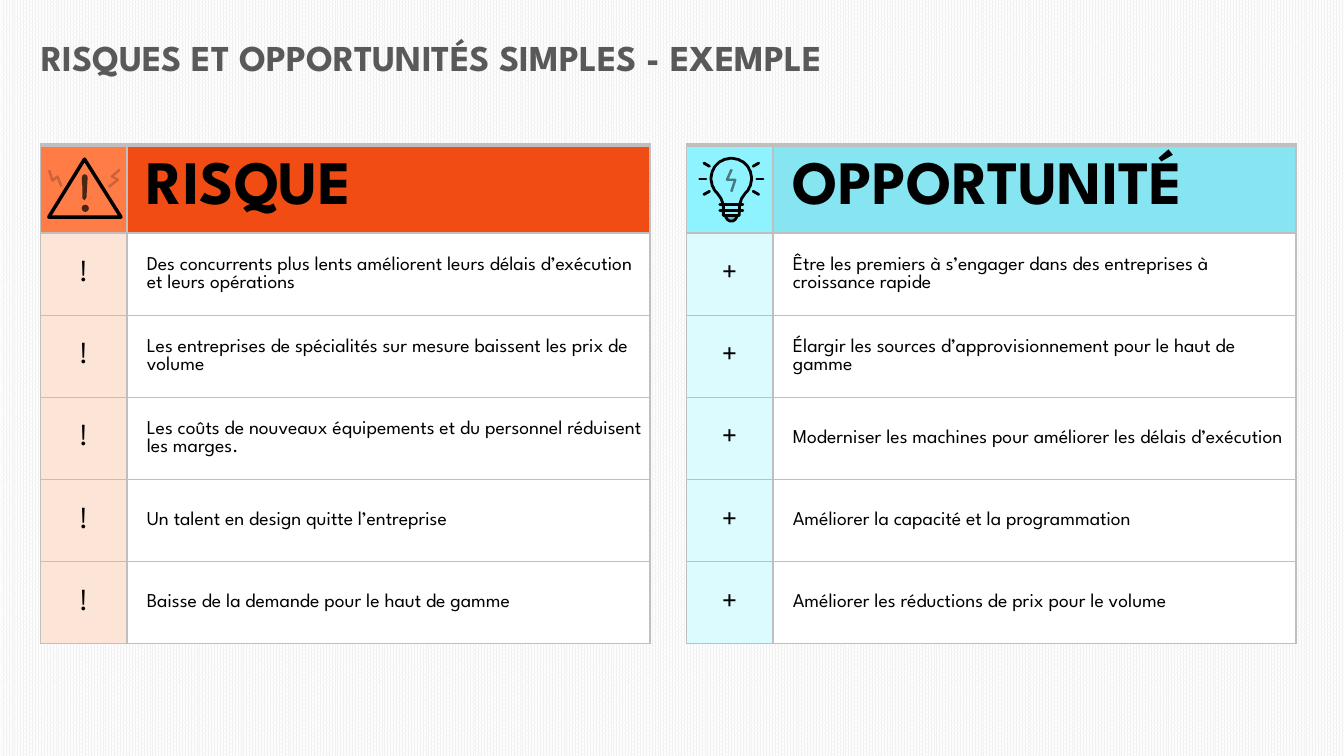
import math

from lxml import etree
from pptx import Presentation
from pptx.dml.color import RGBColor
from pptx.enum.dml import MSO_PATTERN
from pptx.enum.shapes import MSO_CONNECTOR, MSO_SHAPE
from pptx.enum.text import MSO_ANCHOR, PP_ALIGN
from pptx.oxml.ns import qn
from pptx.util import Cm, Pt

FONT = "League Spartan"
BLACK = RGBColor(0x00, 0x00, 0x00)
WHITE = RGBColor(0xFF, 0xFF, 0xFF)
PALE_GREY = RGBColor(0xF2, 0xF2, 0xF2)
BORDER_GREY = RGBColor(0xBF, 0xBF, 0xBF)
TITLE_GREY = RGBColor(0x59, 0x59, 0x59)
ORANGE = RGBColor(0xF0, 0x4C, 0x13)
LIGHT_ORANGE = RGBColor(0xFF, 0x7C, 0x46)
PALE_ORANGE = RGBColor(0xFC, 0xE4, 0xD6)
CYAN = RGBColor(0x86, 0xE5, 0xF1)
LIGHT_CYAN = RGBColor(0x8E, 0xF3, 0xFF)
PALE_CYAN = RGBColor(0xDC, 0xFB, 0xFF)
PERCENT_80 = MSO_PATTERN.PERCENT_80
STRAIGHT = MSO_CONNECTOR.STRAIGHT
OVAL = MSO_SHAPE.OVAL
MIDDLE = MSO_ANCHOR.MIDDLE
LEFT, CENTER = PP_ALIGN.LEFT, PP_ALIGN.CENTER
UNIT = Cm(0.01)

TABLES = [
    (1.02, "RISQUE", "!", ORANGE, LIGHT_ORANGE, PALE_ORANGE, [
        "Des concurrents plus lents améliorent leurs délais d’exécution et leurs opérations",
        "Les entreprises de spécialités sur mesure baissent les prix de volume",
        "Les coûts de nouveaux équipements et du personnel réduisent les marges.",
        "Un talent en design quitte l’entreprise",
        "Baisse de la demande pour le haut de gamme",
    ]),
    (17.3, "OPPORTUNITÉ", "+", CYAN, LIGHT_CYAN, PALE_CYAN, [
        "Être les premiers à s’engager dans des entreprises à croissance rapide",
        "Élargir les sources d’approvisionnement pour le haut de gamme",
        "Moderniser les machines pour améliorer les délais d’exécution",
        "Améliorer la capacité et la programmation",
        "Améliorer les réductions de prix pour le volume",
    ]),
]


def paint(shape, line_width, fill_opacity=0, line_opacity=100):
    shape.shadow.inherit = False
    if fill_opacity:
        shape.fill.solid()
        shape.fill.fore_color.rgb = BLACK
    else:
        shape.fill.background()
    if line_width:
        shape.line.width = Pt(line_width)
        shape.line.color.rgb = BLACK
        etree.SubElement(shape.line._get_or_add_ln(), qn("a:round"))
    else:
        shape.line.fill.background()
    opacities = (fill_opacity, line_opacity) if fill_opacity else (line_opacity,)
    for color, opacity in zip(shape._element.spPr.iter(qn("a:srgbClr")), opacities):
        etree.SubElement(color, qn("a:alpha"), val=str(opacity * 1000))


def draw(points, close, line_width, fill_opacity=0, line_opacity=100):
    builder = slide.shapes.build_freeform(*points[0], scale=UNIT)
    builder.add_line_segments(points[1:], close=close)
    paint(builder.convert_to_shape(), line_width, fill_opacity, line_opacity)


presentation = Presentation()
presentation.slide_width = Cm(33.87)
presentation.slide_height = Cm(19.05)
slide = presentation.slides.add_slide(presentation.slide_layouts[6])

background = slide.background.fill
background.patterned()
background.pattern = PERCENT_80
background.fore_color.rgb = PALE_GREY
background.back_color.rgb = WHITE

title = slide.shapes.add_textbox(Cm(0.79), Cm(0.76), Cm(31.88), Cm(1.37))
title.text_frame.word_wrap = True
paragraph = title.text_frame.paragraphs[0]
paragraph.text = "RISQUES ET OPPORTUNITÉS SIMPLES - EXEMPLE"
paragraph.font.name = FONT
paragraph.font.size = Pt(26)
paragraph.font.bold = True
paragraph.font.color.rgb = TITLE_GREY

for left, heading, mark, heading_color, icon_color, mark_color, entries in TABLES:
    table = slide.shapes.add_table(
        6, 2, Cm(left), Cm(3.66), Cm(15.36), Cm(12.56)).table
    table.first_row = False
    table.horz_banding = False
    table.columns[0].width = Cm(2.18)
    table.columns[1].width = Cm(13.18)
    rows = [("", icon_color, heading, heading_color)]
    rows += [(mark, mark_color, entry, WHITE) for entry in entries]
    for row, (mark_text, mark_fill, text, text_fill) in enumerate(rows):
        table.rows[row].height = Cm(2.07 if row else 2.21)
        columns = [
            (mark_text, mark_fill, 21, CENTER, 0.03, 1),
            (text, text_fill, 14 if row else 44, LEFT, 0.5, 2.25),
        ]
        for column, (words, fill, size, alignment, margin, right) in enumerate(columns):
            cell = table.cell(row, column)
            properties = cell._tc.get_or_add_tcPr()
            widths = {"L": 1, "R": right, "T": 1 if row else 3, "B": 1}
            for side, width in widths.items():
                border = etree.SubElement(
                    properties, qn(f"a:ln{side}"), w=str(Pt(width)))
                solid = etree.SubElement(border, qn("a:solidFill"))
                etree.SubElement(solid, qn("a:srgbClr"), val=str(BORDER_GREY))
            cell.fill.solid()
            cell.fill.fore_color.rgb = fill
            cell.vertical_anchor = MIDDLE
            cell.margin_left = Cm(margin)
            cell.margin_right = cell.margin_top = Cm(0.03)
            cell.margin_bottom = 0
            paragraph = cell.text_frame.paragraphs[0]
            paragraph.text = words
            paragraph.alignment = alignment
            paragraph.font.name = FONT
            paragraph.font.size = Pt(size)
            paragraph.font.bold = row == 0
            paragraph.font.color.rgb = BLACK

draw([(124, 429), (132, 455), (145, 445), (155, 470)], False, 1.75, line_opacity=20)
draw([(302, 427), (282, 445), (297, 453), (274, 471)], False, 1.75, line_opacity=20)
draw([(213, 401), (305, 547), (123, 547)], True, 2.5)
draw([(206, 450), (208, 442), (213, 439), (219, 442), (221, 447),
      (218, 498), (213, 505), (208, 500), (208, 475)], True, 0, 70)
dot = slide.shapes.add_shape(OVAL, Cm(2.06), Cm(5.16), Cm(0.18), Cm(0.18))
paint(dot, 0, 70)

bulb_x, bulb_y = 1843, 450
glass = [(bulb_x + 51 * math.cos(math.radians(angle)),
          bulb_y + 51 * math.sin(math.radians(angle)))
         for angle in range(135, 406, 6)]
neck = [(1869, 500), (1864, 516), (1863, 543), (1823, 543), (1823, 516), (1817, 500)]
draw(glass + neck, True, 2)
base = [(bulb_x + 14 * math.cos(math.radians(angle)),
         543 + 14 * math.sin(math.radians(angle)))
        for angle in range(0, 181, 15)]
draw(base, True, 2, 24)
draw([(1844, 427), (1832, 453), (1853, 453), (1843, 483)], False, 1.75, line_opacity=50)

strokes = [(1814, y, 1872, y) for y in (516, 530)]
for side in (-1, 1):
    for inner_x, inner_y, outer_x, outer_y in [
            (64, 1, 80, 1), (55, -31, 69, -39), (55, 32, 69, 40)]:
        strokes.append((bulb_x + side * inner_x, bulb_y + inner_y,
                        bulb_x + side * outer_x, bulb_y + outer_y))
for stroke in strokes:
    connector = slide.shapes.add_connector(
        STRAIGHT, *(Cm(value / 100) for value in stroke))
    connector.line.width = Pt(2)
    connector.line.color.rgb = BLACK
    connector.line._get_or_add_ln().set("cap", "rnd")
    etree.SubElement(connector._element.spPr, qn("a:effectLst"))

presentation.save("out.pptx")
